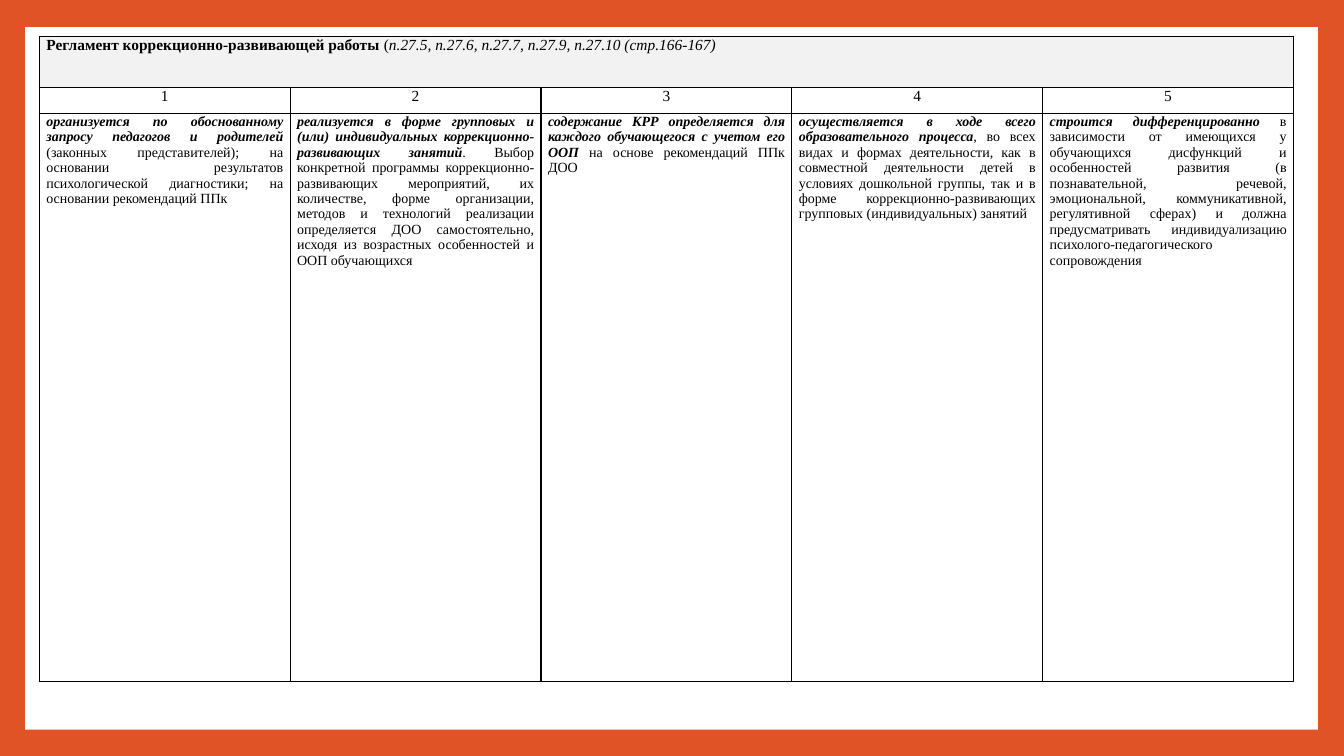
"""Build a slide with a five-column table of rules for correctional work."""
import pptx
import pptx.util
import pptx.dml.color
import pptx.enum.shapes
import pptx.enum.text
import pptx.oxml.ns
from dataclasses import dataclass
from lxml import etree
from pptx.util import Inches

RGB = pptx.dml.color.RGBColor
ALIGN = pptx.enum.text.PP_ALIGN


@dataclass(frozen=True)
class Theme:
    frame: RGB = RGB(0xDF, 0x53, 0x27)
    paper: RGB = RGB(0xFF, 0xFF, 0xFF)
    header: RGB = RGB(0xF2, 0xF2, 0xF2)
    ink: RGB = RGB(0, 0, 0)
    font: str = "Times New Roman"
    head_size: int = 11
    body_size: int = 10
    border: int = 1


theme = Theme()

title = [
    ("Регламент коррекционно-развивающей работы ", True, False),
    ("(", False, False),
    ("п.27.5, п.27.6, п.27.7, п.27.9, п.27.10 (стр.166-167)", False, True),
]
rules = [
    ("организуется по обоснованному запросу педагогов и родителей",
     " (законных представителей); на основании результатов психологической "
     "диагностики; на основании рекомендаций ППк"),
    ("реализуется в форме групповых и (или) индивидуальных "
     "коррекционно-развивающих занятий",
     ". Выбор конкретной программы коррекционно-развивающих мероприятий, их "
     "количестве, форме организации, методов и технологий реализации определяется "
     "ДОО самостоятельно, исходя из возрастных особенностей и ООП обучающихся"),
    ("содержание КРР определяется для каждого обучающегося с учетом его ООП ",
     "на основе рекомендаций ППк ДОО"),
    ("осуществляется в ходе всего образовательного процесса",
     ", во всех видах и формах деятельности, как в совместной деятельности детей "
     "в условиях дошкольной группы, так и в форме коррекционно-развивающих "
     "групповых (индивидуальных) занятий"),
    ("строится дифференцированно",
     " в зависимости от имеющихся у обучающихся дисфункций и особенностей развития "
     "(в познавательной, речевой, эмоциональной, коммуникативной, регулятивной "
     "сферах) и должна предусматривать индивидуализацию психолого-педагогического "
     "сопровождения"),
]


def style_cell(cell, fill=None):
    cell.margin_left = cell.margin_right = Inches(0.07)
    cell.margin_top = cell.margin_bottom = 0
    tcPr = cell._tc.get_or_add_tcPr()
    for side in ("a:lnL", "a:lnR", "a:lnT", "a:lnB"):
        ln = etree.SubElement(tcPr, pptx.oxml.ns.qn(side),
                              w=str(pptx.util.Pt(theme.border)))
        solid = etree.SubElement(ln, pptx.oxml.ns.qn("a:solidFill"))
        etree.SubElement(solid, pptx.oxml.ns.qn("a:srgbClr"), val=str(theme.ink))
    if fill is None:
        cell.fill.background()
    else:
        cell.fill.solid()
        cell.fill.fore_color.rgb = fill


def write_cell(cell, runs, size, align):
    p = cell.text_frame.paragraphs[0]
    p.alignment = align
    for text, bold, italic in runs:
        r = p.add_run()
        r.text = text
        r.font.name = theme.font
        r.font.size = pptx.util.Pt(size)
        r.font.bold = bold
        r.font.italic = italic
        r.font.color.rgb = theme.ink


prs = pptx.Presentation()
prs.slide_width = Inches(13.33)
prs.slide_height = Inches(7.5)
s = prs.slides.add_slide(prs.slide_layouts[6])
s.background.fill.solid()
s.background.fill.fore_color.rgb = theme.frame

sp = s.shapes.add_shape(pptx.enum.shapes.MSO_SHAPE.RECTANGLE,
                        Inches(0.25), Inches(0.27), Inches(12.82), Inches(6.97))
sp.shadow.inherit = False
sp.fill.solid()
sp.fill.fore_color.rgb = theme.paper
sp.line.fill.background()

table = s.shapes.add_table(3, len(rules), Inches(0.39), Inches(0.36),
                           Inches(12.44), Inches(6.4)).table
table.first_row = False
table.horz_banding = False
for column in table.columns:
    column.width = Inches(2.488)
for row, height in zip(table.rows, (0.51, 0.26, 5.63)):
    row.height = Inches(height)

for i in range(len(rules)):
    style_cell(table.cell(0, i), theme.header)
table.cell(0, 0).merge(table.cell(0, len(rules) - 1))
write_cell(table.cell(0, 0), title, theme.head_size, ALIGN.JUSTIFY)

for i, (lead, detail) in enumerate(rules):
    number, body = table.cell(1, i), table.cell(2, i)
    style_cell(number)
    write_cell(number, [(str(i + 1), False, False)], theme.head_size, ALIGN.CENTER)
    style_cell(body)
    write_cell(body, [(lead, True, True), (detail, False, False)],
               theme.body_size, ALIGN.JUSTIFY)

prs.save("out.pptx")
